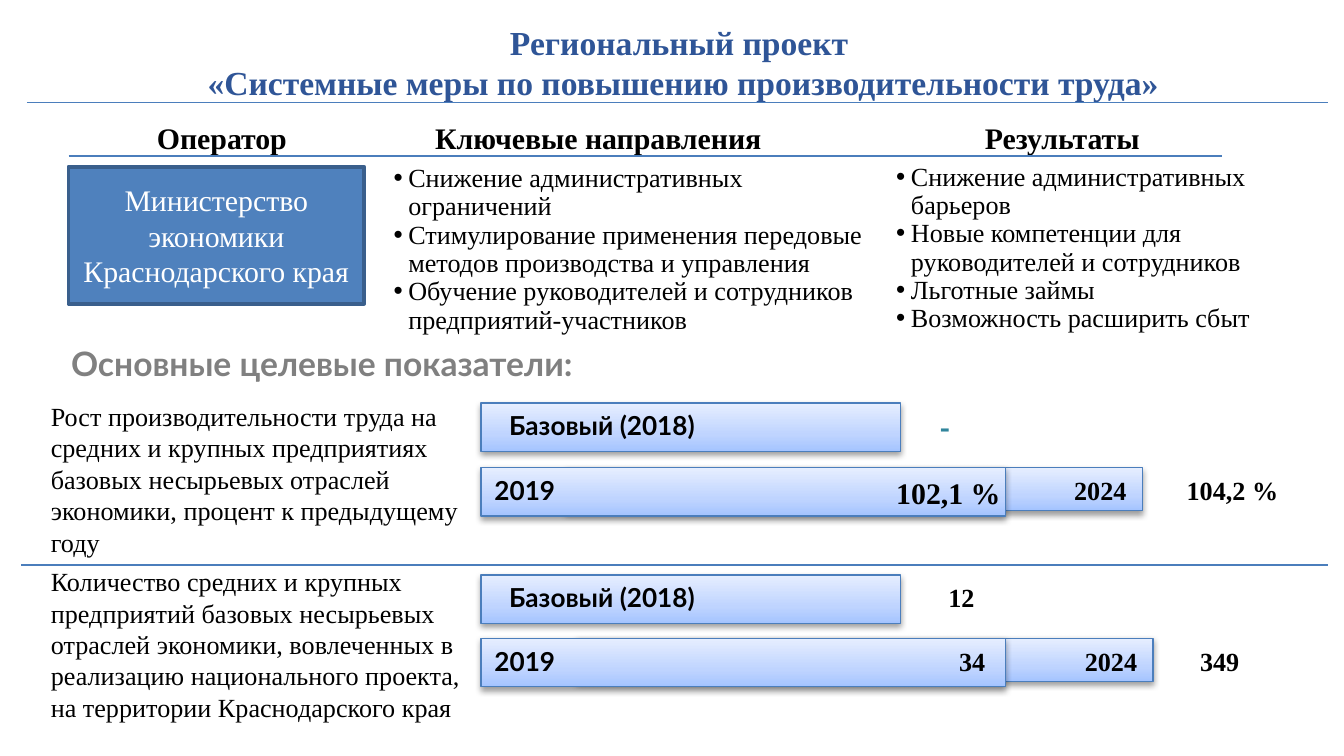
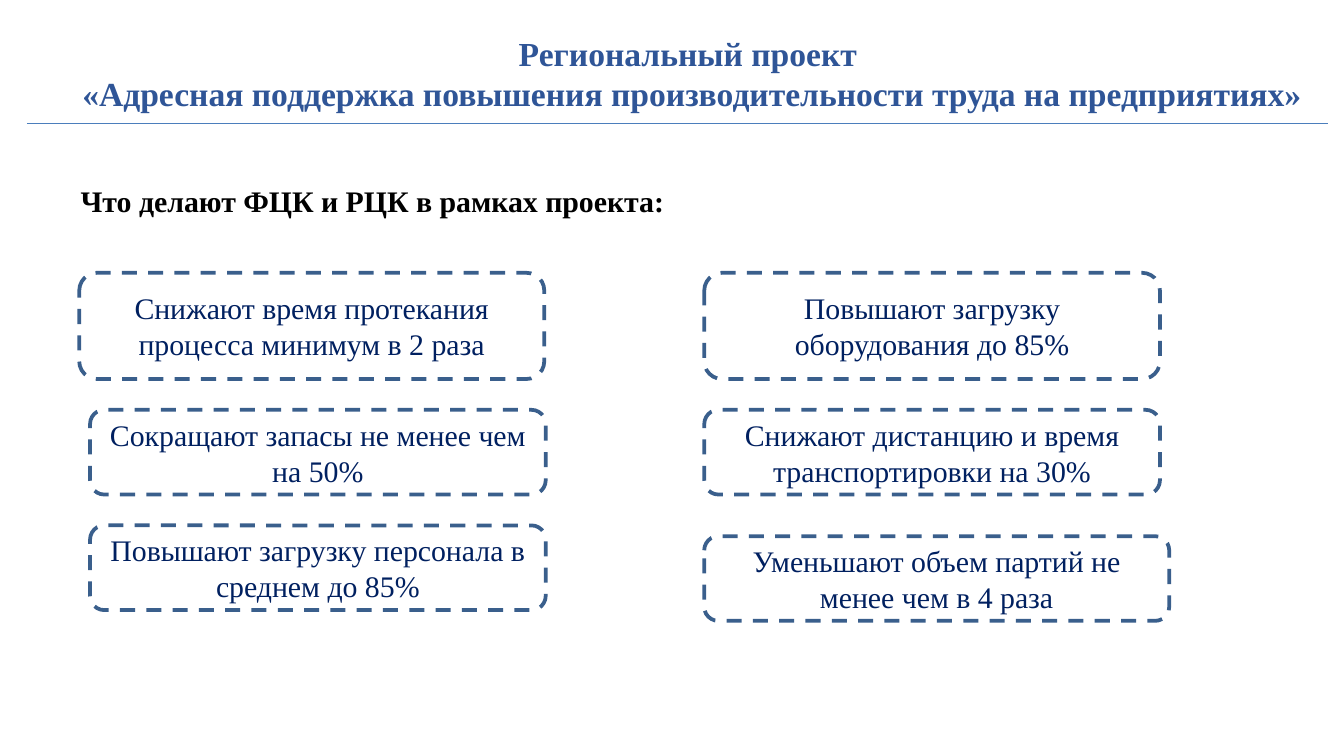
import pptx
import pptx.dml.color
import pptx.enum.dml
import pptx.enum.shapes
import pptx.enum.text
import pptx.oxml
import pptx.oxml.ns
import pptx.util

RGB = pptx.dml.color.RGBColor
ALIGN = pptx.enum.text.PP_ALIGN
ANCHOR = pptx.enum.text.MSO_ANCHOR
FIT = pptx.enum.text.MSO_AUTO_SIZE
SHAPE = pptx.enum.shapes.MSO_SHAPE
qn = pptx.oxml.ns.qn

BLACK = RGB(0x00, 0x00, 0x00)
WHITE = RGB(0xFF, 0xFF, 0xFF)
GREY = RGB(0x80, 0x80, 0x80)
TEAL = RGB(0x31, 0x85, 0x9C)
NAVY = RGB(0x00, 0x20, 0x60)
TITLE_BLUE = RGB(0x2F, 0x55, 0x97)
RULE_BLUE = RGB(0x4B, 0x7E, 0xBC)
BOX_BLUE = RGB(0x4F, 0x81, 0xBD)
BORDER_BLUE = RGB(0x3A, 0x5F, 0x8C)
BAR_STOPS = [(0, RGB(0xA4, 0xC4, 0xFF)), (35, RGB(0xBF, 0xD4, 0xFF)),
             (100, RGB(0xE6, 0xEE, 0xFF))]

SERIF, SANS = "Times New Roman", "Lato"

# A 16:9 slide on a grid of square cells, 100 columns wide
WIDTH = pptx.util.Inches(10)
HEIGHT = pptx.util.Emu(WIDTH * 9 // 16)
CELL = WIDTH / 100


def cells(*counts):
    return [pptx.util.Emu(round(count * CELL)) for count in counts]


def drawing_xml(tag, attributes="", inner=""):
    namespace = pptx.oxml.ns.nsdecls("a")
    return pptx.oxml.parse_xml(f"<a:{tag} {namespace} {attributes}>{inner}</a:{tag}>")


def move(shape, area):
    shape.left, shape.top, shape.width, shape.height = cells(*area)


def write(frame, text, size, color=BLACK, font=SERIF, bold=False, align=ALIGN.LEFT):
    frame.text = text
    for para in frame.paragraphs:
        para.alignment = align
        for line_break in para._p.findall(qn("a:br")):
            line_break.append(drawing_xml("rPr", f'sz="{size * 100}"'))
        for span in para.runs:
            span.font.size = pptx.util.Pt(size)
            span.font.name = font
            span.font.bold = bold
            span.font.color.rgb = color


def add_title(page, text, area, bottom_inset=0.5):
    title = page.shapes.title
    move(title, area)
    frame = title.text_frame
    frame.auto_size = FIT.NONE
    frame.vertical_anchor = ANCHOR.MIDDLE
    frame.margin_bottom = cells(bottom_inset)[0]
    write(frame, text, 18, TITLE_BLUE, bold=True, align=ALIGN.CENTER)


def add_heading(page, text, area):
    body = page.placeholders[1]
    move(body, area)
    frame = body.text_frame
    frame.auto_size = FIT.NONE
    write(frame, text, 16, bold=True)
    para = frame.paragraphs[0]
    para.space_before = pptx.util.Pt(0)
    properties = para._p.get_or_add_pPr()
    properties.set("marL", "0")
    properties.set("indent", "0")
    properties.append(drawing_xml("buNone"))


def add_column_heads(page, heads, area, tabs):
    text = "".join("\t" + head for head in heads)
    frame = add_label(page, text, area, size=16, wrap=True, bold=True)
    stops = "".join(f'<a:tab pos="{stop}" algn="l"/>' for stop in cells(*tabs))
    properties = frame.paragraphs[0]._p.get_or_add_pPr()
    properties.append(drawing_xml("tabLst", inner=stops))


def add_rule(page, left, right, row):
    start, end, height = cells(left, right, row)
    rule = page.shapes.add_connector(
        pptx.enum.shapes.MSO_CONNECTOR.STRAIGHT, start, height, end, height)
    rule.line.color.rgb = RULE_BLUE
    rule.line.width = pptx.util.Pt(0.75)
    rule._element.spPr.append(drawing_xml("effectLst"))


def add_label(page, text, area, size=14, wrap=False, **style):
    box = page.shapes.add_textbox(*cells(*area))
    frame = box.text_frame
    frame.word_wrap = wrap
    frame.auto_size = FIT.SHAPE_TO_FIT_TEXT
    write(frame, text, size, **style)
    return frame


def add_bullets(page, items, area):
    frame = add_label(page, "\n".join(items), area, wrap=True)
    hang = cells(1.1)[0]
    for para in frame.paragraphs:
        para.line_spacing = 0.9
        properties = para._p.get_or_add_pPr()
        properties.set("marL", str(hang))
        properties.set("indent", str(-hang))
        properties.append(drawing_xml("buFont", 'typeface="Arial"'))
        properties.append(drawing_xml("buChar", 'char="•"'))


def add_box(page, text, area, kind, fill, color, dash=None):
    box = page.shapes.add_shape(kind, *cells(*area))
    box.shadow.inherit = False
    box.fill.solid()
    box.fill.fore_color.rgb = fill
    box.line.color.rgb = BORDER_BLUE
    box.line.width = pptx.util.Pt(2)
    if dash:
        box.line.dash_style = dash
    box.text_frame.vertical_anchor = ANCHOR.MIDDLE
    write(box.text_frame, text, 16, color, align=ALIGN.CENTER)


def add_bar(page, area):
    bar = page.shapes.add_shape(SHAPE.RECTANGLE, *cells(*area))
    bar.line.color.rgb = RULE_BLUE
    bar.line.width = pptx.util.Pt(0.75)
    # Three-stop gradient, dark at the bottom
    bar.fill.gradient()
    bar.fill.gradient_angle = 90
    properties = bar._element.spPr
    stops = properties.find(qn("a:gradFill")).find(qn("a:gsLst"))
    for stop in list(stops):
        stops.remove(stop)
    for share, color in BAR_STOPS:
        stops.append(drawing_xml("gs", f'pos="{share * 1000}"',
                                 f'<a:srgbClr val="{color}"/>'))
    # Soft shadow below
    bar.shadow.inherit = False
    properties.find(qn("a:effectLst")).append(drawing_xml(
        "outerShdw", 'blurRad="40000" dist="20000" dir="5400000" rotWithShape="0"',
        '<a:srgbClr val="000000"><a:alpha val="38000"/></a:srgbClr>'))


def add_indicator(page, description, text_row, base_row, year_row, target_left):
    left, height, target_width = 35.8, 3.6, 42.9
    target_right = target_left + target_width
    add_bar(page, (target_left, year_row, target_width, 3.2))
    add_bar(page, (left, base_row, 31.2, height))
    add_bar(page, (left, year_row, 39, height))
    add_label(page, description, (2.8, text_row, 34.3, 12.8), wrap=True)
    for text, area, font in [
            ("Базовый (2018)", (left, base_row, 16.9, 3.4), SANS),
            ("2019", (left, year_row, 6.5, 3.4), SANS),
            ("2024", (target_right - 6.1, year_row, 5.9, 3.4), SERIF)]:
        add_label(page, text, area, font=font, bold=True, align=ALIGN.RIGHT)


def build_measures(deck):
    page = deck.slides.add_slide(deck.slide_layouts[5])
    add_title(page, "Региональный проект \v"
              "«Системные меры по повышению производительности труда»",
              (4.3, 2.1, 93.1, 5))
    add_column_heads(page, ["Оператор", "Ключевые направления", "Результаты"],
                     (5.1, 8.4, 90, 3.7), tabs=(5.6, 26.3, 67.2))
    add_box(page, "Министерство экономики Краснодарского края",
            (5.1, 12.4, 22, 10.2), SHAPE.RECTANGLE, BOX_BLUE, WHITE)
    add_bullets(page, [
        "Снижение административных ограничений",
        "Стимулирование применения передовые методов производства и управления",
        "Обучение руководителей и сотрудников предприятий-участников",
    ], (28.3, 11.8, 38.6, 13.7))
    add_bullets(page, [
        "Снижение административных барьеров",
        "Новые компетенции для руководителей и сотрудников",
        "Льготные займы",
        "Возможность расширить сбыт",
    ], (65.7, 11.7, 33, 13.7))

    # Target indicators
    add_label(page, "Основные целевые показатели:", (4.3, 25, 41.5, 4),
              size=18, color=GREY, font=SANS, bold=True)
    add_indicator(page, "Рост производительности труда на средних и крупных "
                  "предприятиях базовых несырьевых отраслей экономики, "
                  "процент к предыдущему году", 29.3, 30, 34.8, 42.1)
    add_indicator(page, "Количество средних и крупных предприятий базовых "
                  "несырьевых отраслей экономики, вовлеченных в реализацию "
                  "национального проекта, на территории Краснодарского края",
                  41.6, 42.8, 47.5, 42.9)

    # Indicator values
    add_label(page, "-", (68.9, 30, 2.9, 3.7), size=16, color=TEAL,
              font=SANS, bold=True)
    add_label(page, "102,1 %", (65.7, 34.8, 9.9, 3.7), size=16, bold=True)
    for text, area in [("104,2 %", (87.2, 34.8, 8.9, 3.4)),
                       ("12", (69.5, 42.8, 4, 3.4)),
                       ("34", (70.3, 47.5, 4, 3.4)),
                       ("349", (88.2, 47.5, 5, 3.4))]:
        add_label(page, text, area, bold=True, align=ALIGN.RIGHT)

    for left, right, row in [(2, 98.8, 7.65), (5.1, 90.9, 11.6), (1.6, 98.8, 42.05)]:
        add_rule(page, left, right, row)


def build_support(deck):
    page = deck.slides.add_slide(deck.slide_layouts[1])
    add_title(page, "Региональный проект \v«Адресная поддержка повышения "
              "производительности труда на предприятиях»",
              (5, 2.3, 93, 9.4), bottom_inset=3.6)
    add_heading(page, "Что делают ФЦК и РЦК в рамках проекта:", (5, 13.1, 90, 37.1))
    for text, area in [
            ("Снижают время протекания процесса минимум в 2 раза",
             (5.9, 20.3, 34.6, 7.9)),
            ("Сокращают запасы не менее чем на 50%", (6.7, 30.5, 33.9, 6.3)),
            ("Повышают загрузку персонала в среднем до 85%", (6.7, 39.1, 33.9, 6.3)),
            ("Повышают загрузку оборудования до 85%", (52.4, 20.3, 33.9, 7.9)),
            ("Снижают дистанцию и время транспортировки на 30%",
             (52.4, 30.5, 33.9, 6.3)),
            ("Уменьшают объем партий не менее чем в 4 раза",
             (52.4, 39.9, 34.6, 6.3))]:
        add_box(page, text, area, SHAPE.ROUNDED_RECTANGLE, WHITE, NAVY,
                pptx.enum.dml.MSO_LINE.DASH)
    add_rule(page, 2, 98.8, 9.2)


def main():
    deck = pptx.Presentation()
    deck.slide_width, deck.slide_height = WIDTH, HEIGHT
    build_measures(deck)
    build_support(deck)
    deck.save("out.pptx")


if __name__ == "__main__":
    main()
